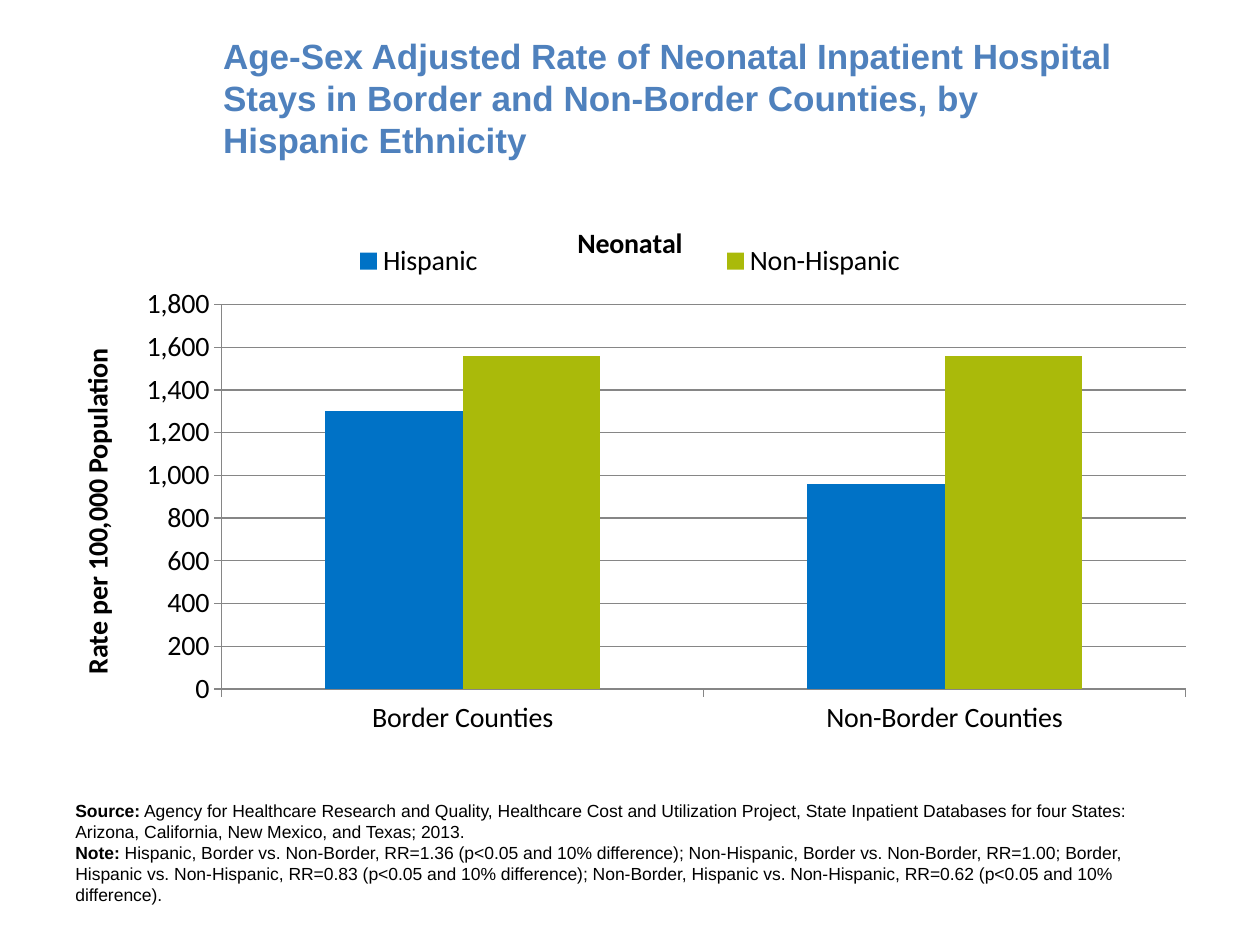
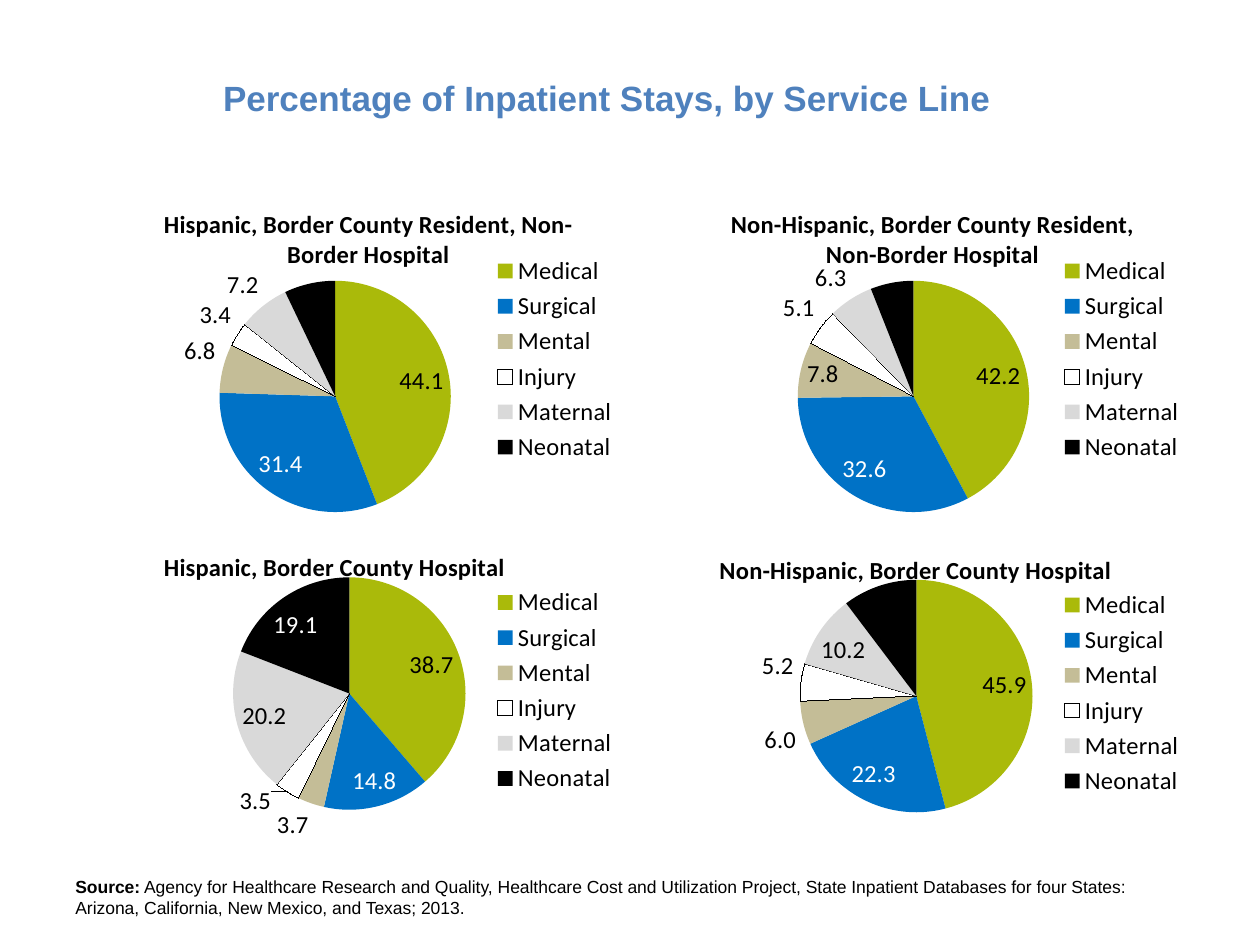
from pptx import Presentation
from pptx.chart.data import CategoryChartData as Data
from pptx.dml.color import RGBColor as RGB
from pptx.enum.chart import XL_CHART_TYPE as Kind
from pptx.enum.chart import XL_LABEL_POSITION as Spot
from pptx.enum.chart import XL_LEGEND_POSITION as Side
from pptx.enum.chart import XL_TICK_MARK as Tick
from pptx.enum.text import MSO_ANCHOR as Anchor
from pptx.enum.text import PP_ALIGN as Align
from pptx.oxml import parse_xml
from pptx.oxml.ns import nsdecls, qn
from pptx.util import Inches, Pt

# Colours
HEAD = RGB(0x4F, 0x81, 0xBD)
BLACK = RGB(0, 0, 0)
WHITE = RGB(0xFF, 0xFF, 0xFF)
BLUE = RGB(0x00, 0x72, 0xC6)
GREEN = RGB(0xAA, 0xBA, 0x0A)
TAN = RGB(0xC4, 0xBD, 0x97)
PALE = RGB(0xD9, 0xD9, 0xD9)
GRAY = RGB(0x86, 0x86, 0x86)

# Shared content
SOURCE = ("Source:", " Agency for Healthcare Research and Quality, Healthcare Cost and "
          "Utilization Project, State Inpatient Databases for four States: "
          "Arizona, California, New Mexico, and Texas; 2013.")

# Slide 1 content
RATE_HEAD = ("Age-Sex Adjusted Rate of Neonatal Inpatient Hospital Stays in Border "
             "and Non-Border Counties, by Hispanic Ethnicity")
NOTE = ("Note: ", "Hispanic, Border vs. Non-Border, RR=1.36 (p<0.05 and 10% difference); "
        "Non-Hispanic, Border vs. Non-Border, RR=1.00; Border, Hispanic vs. "
        "Non-Hispanic, RR=0.83 (p<0.05 and 10% difference); Non-Border, Hispanic vs. "
        "Non-Hispanic, RR=0.62 (p<0.05 and 10% difference).")
AREAS = ["Border Counties", "Non-Border Counties"]
RATES = [("Hispanic", (1300, 960), BLUE), ("Non-Hispanic", (1560, 1560), GREEN)]

# Slide 2 content
SHARE_HEAD = "Percentage of Inpatient Stays, by Service Line"
LINES = {"Medical": GREEN, "Surgical": BLUE, "Mental": TAN,
         "Injury": WHITE, "Maternal": PALE, "Neonatal": BLACK}
DARK = (BLUE, BLACK)
HIGH = (0.27, 0.44, 0.68)  # top, width, height of the pie in the upper row
LOW = (0.14, 0.41, 0.74)   # and in the lower row
# title, values, chart left, top, height, title left, pie left, pie frame
PIES = [
    ("Hispanic, Border County Resident, Non-Border Hospital",
     (44.1, 31.4, 6.8, 3.4, 7.2, 7.1), 0.5, 1.5, 2.7, 0.17, 0.26, HIGH),
    ("Non-Hispanic, Border County Resident, Non-Border Hospital",
     (42.2, 32.6, 7.8, 5.1, 6.3, 6.0), 5, 1.5, 2.7, 0.17, 0.28, HIGH),
    ("Hispanic, Border County Hospital",
     (38.7, 14.8, 3.7, 3.5, 20.2, 19.1), 0.5, 4.23, 2.5, 0.17, 0.3, LOW),
    ("Non-Hispanic, Border County Hospital",
     (45.9, 22.3, 6.0, 5.2, 10.2, 10.3), 5, 4.25, 2.5, 0.15, 0.3, LOW),
]

# Text formats
TITLE = dict(name="Arial", size=Pt(20), bold=True, color=HEAD)
FOOT = dict(name="Arial", size=Pt(10), color=BLACK)
BIG = dict(name="Calibri", size=Pt(16), bold=False, color=BLACK)
SMALL = BIG | dict(size=Pt(14))


def style(font, form):
    for key, val in form.items():
        if key == "color":
            font.color.rgb = val
        else:
            setattr(font, key, val)


def box(*sides):
    return [Inches(side) for side in sides]


def paint(part, color):
    part.format.fill.solid()
    part.format.fill.fore_color.rgb = color


def place(node, index, inner=False, **sizes):
    """Give a chart part a fixed layout, in fractions of the chart."""
    for old in node.findall(qn("c:layout")):
        node.remove(old)
    tags = '<c:layoutTarget val="inner"/>' if inner else ""
    tags += '<c:xMode val="edge"/><c:yMode val="edge"/>'
    tags += "".join(f'<c:{key} val="{val}"/>' for key, val in sizes.items())
    node.insert(index, parse_xml(
        f'<c:layout {nsdecls("c")}><c:manualLayout>{tags}</c:manualLayout></c:layout>'))


def part(chart, name):
    return chart._chartSpace.xpath(f"c:chart/c:{name}")[0]


def label(title, text, form):
    title.text_frame.text = text
    style(title.text_frame.paragraphs[0].runs[0].font, form | dict(bold=True))


def add_page(deck, head, width):
    page = deck.slides.add_slide(deck.slide_layouts[5])
    title = page.shapes.title
    title.left, title.top, title.width, title.height = box(1.67, 0.3, width, 0.95)
    frame = title.text_frame
    frame.text = head
    frame.vertical_anchor = Anchor.MIDDLE
    frame.paragraphs[0].alignment = Align.LEFT
    style(frame.paragraphs[0].runs[0].font, TITLE)
    return page


def add_foot(page, top, height, notes):
    frame = page.shapes.add_textbox(*box(0.5, top, 9, height)).text_frame
    frame.word_wrap = True
    for i, note in enumerate(notes):
        para = frame.add_paragraph() if i else frame.paragraphs[0]
        for text, bold in zip(note, (True, False)):
            run = para.add_run()
            run.text = text
            style(run.font, FOOT | dict(bold=bold))


def add_chart(page, kind, area, cats, rows, title, side, form, num):
    data = Data(number_format=num)
    data.categories = cats
    for name, vals in rows:
        data.add_series(name, vals)
    chart = page.shapes.add_chart(kind, *box(*area), data).chart
    style(chart.font, form)
    chart.has_title = chart.has_legend = True
    label(chart.chart_title, title, form)
    chart.legend.position = side
    chart.legend.include_in_layout = False
    style(chart.legend.font, form)
    return chart


def add_bars(page):
    chart = add_chart(page, Kind.COLUMN_CLUSTERED, (0.5, 1.6, 9, 4.3), AREAS,
                      [row[:2] for row in RATES], "Neonatal", Side.TOP, BIG, "#,##0")
    place(part(chart, "plotArea"), 0, True, x=0.14, y=0.19, w=0.85, h=0.71)
    place(part(chart, "legend"), 1, x=0.05, y=0.07, w=0.9, h=0.08)
    plot = chart.plots[0]
    plot.gap_width = 150
    plot.vary_by_categories = False
    for bars, row in zip(plot.series, RATES):
        paint(bars, row[2])
    # Axes
    rate = chart.value_axis
    limits = dict(minimum_scale=0, maximum_scale=1800, major_unit=200)
    for key, val in limits.items():
        setattr(rate, key, val)
    rate.has_major_gridlines = rate.has_title = True
    rate.major_gridlines.format.line.color.rgb = GRAY
    label(rate.axis_title, "Rate per 100,000 Population", BIG)
    rate.tick_labels.number_format = "#,##0"
    rate.tick_labels.number_format_is_linked = False
    for axis in (rate, chart.category_axis):
        axis.major_tick_mark = Tick.OUTSIDE
        axis.minor_tick_mark = Tick.NONE
        axis.format.line.color.rgb = GRAY
        style(axis.tick_labels.font, BIG)


def add_pie(page, title, vals, left, top, height, start, edge, frame):
    chart = add_chart(page, Kind.PIE, (left, top, 4.5, height), list(LINES),
                      [("Share", vals)], title, Side.RIGHT, SMALL, "#,##0.0")
    place(part(chart, "title"), 1, x=start, y=0.04)
    place(part(chart, "plotArea"), 0, True, x=edge, **dict(zip("ywh", frame)))
    plot = chart.plots[0]
    plot.vary_by_categories = True
    pie = plot.series[0]
    tags = pie.data_labels
    tags.show_value = True
    tags.number_format = "#,##0.0"
    tags.number_format_is_linked = False
    tags.position = Spot.BEST_FIT
    style(tags.font, SMALL)
    for i, color in enumerate(LINES.values()):
        slice_ = pie.points[i]
        paint(slice_, color)
        if color == WHITE:
            slice_.format.line.color.rgb = BLACK
        else:
            slice_.format.line.fill.background()
        if color in DARK:
            style(slice_.data_label.font, SMALL | dict(color=WHITE))
            slice_.data_label.position = Spot.BEST_FIT


def main():
    deck = Presentation()
    deck.slide_width, deck.slide_height = box(10, 7.5)

    # Slide 1: rates by county
    page = add_page(deck, RATE_HEAD, 7.42)
    add_bars(page)
    add_foot(page, 6.3, 0.94, [SOURCE, NOTE])

    # Slide 2: shares by service line
    page = add_page(deck, SHARE_HEAD, 7.75)
    for pie in PIES:
        add_pie(page, *pie)
    add_foot(page, 6.9, 0.44, [SOURCE])

    deck.save("out.pptx")


if __name__ == "__main__":
    main()
